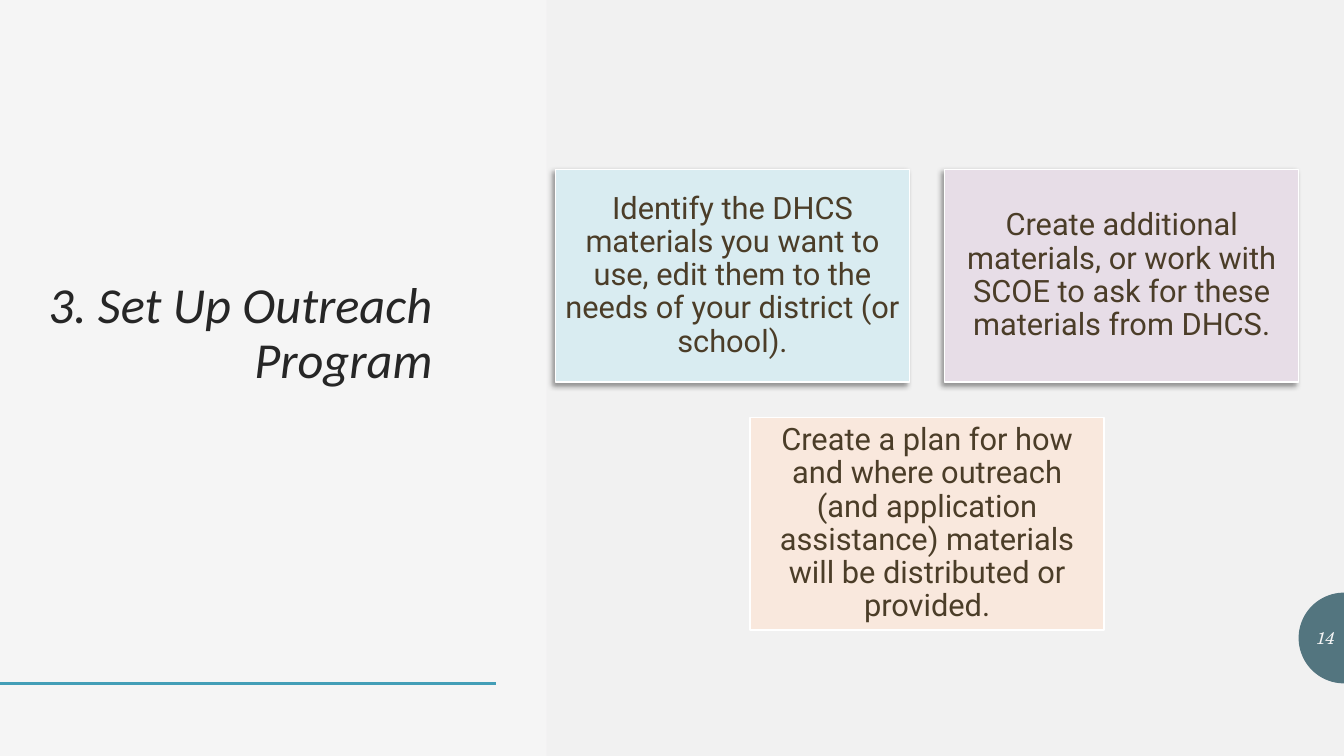
import math

import pptx
import pptx.dml.color
import pptx.enum.shapes
import pptx.enum.text
import pptx.oxml
import pptx.oxml.ns
import pptx.util
from lxml import etree

PX = 9144  # 100 px to the inch
NS = pptx.oxml.ns.nsdecls("a")
ALIGN = pptx.enum.text.PP_ALIGN


def color(value):
    return pptx.dml.color.RGBColor.from_string(value)


def write(shape, text, size, font, ink, align, italic=False, spacing=1.0, inset=10):
    frame = shape.text_frame
    frame.word_wrap = True
    frame.auto_size = pptx.enum.text.MSO_AUTO_SIZE.NONE
    frame.vertical_anchor = pptx.enum.text.MSO_ANCHOR.MIDDLE
    frame.margin_left = frame.margin_right = inset * PX
    frame.margin_top = frame.margin_bottom = min(inset, 9) * PX
    para = frame.paragraphs[0]
    para.alignment = align
    para.line_spacing = spacing
    span = para.add_run()
    span.text = text
    span.font.size = pptx.util.Pt(size)
    span.font.name = font
    span.font.italic = italic
    span.font.color.rgb = color(ink)


deck = pptx.Presentation()
deck.slide_width, deck.slide_height = 1333 * PX, 750 * PX
slide = deck.slides.add_slide(deck.slide_layouts[5])
slide.background.fill.solid()
slide.background.fill.fore_color.rgb = color("F5F5F5")
shapes = slide.shapes

# Half circle behind the page number, seen through the pale panel
center_x, center_y, radius = 1333, 633, 45
arc = []
for step in range(49):
    angle = math.pi * (0.5 + step / 48)
    arc.append((round((center_x + radius * math.cos(angle)) * PX),
                round((center_y + radius * math.sin(angle)) * PX)))
builder = shapes.build_freeform(*arc[0])
builder.add_line_segments(arc[1:], close=True)
badge = builder.convert_to_shape()
badge.shadow.inherit = False
badge.fill.solid()
badge.fill.fore_color.rgb = color("224F5C")
badge.line.fill.background()

rule = shapes.add_connector(pptx.enum.shapes.MSO_CONNECTOR.STRAIGHT,
                            0, 678 * PX, 492 * PX, 678 * PX)
rule.line.color.rgb = color("439EB7")
rule.line.width = pptx.util.Pt(2)
rule._element.spPr.append(pptx.oxml.parse_xml(f"<a:effectLst {NS}/>"))

RECTANGLE = pptx.enum.shapes.MSO_SHAPE.RECTANGLE
panel = shapes.add_shape(RECTANGLE, 542 * PX, 0, 791 * PX, 750 * PX)
panel.shadow.inherit = False
panel.fill.solid()
panel.fill.fore_color.rgb = color("E9E7E9")
panel.line.fill.background()
panel_color = panel._element.spPr.find(".//" + pptx.oxml.ns.qn("a:srgbClr"))
etree.SubElement(panel_color, pptx.oxml.ns.qn("a:alpha"), val="25000")

title = shapes.title
title.left, title.top, title.width, title.height = 0, 61 * PX, 439 * PX, 542 * PX
write(title, "3. Set Up Outreach Program", 36, "Calibri", "262626",
      ALIGN.RIGHT, italic=True, spacing=0.9)

cards = [
    (551, 168, "D9ECF1", True, "Identify the DHCS materials you want to use, "
     "edit them to the needs of your district (or school)."),
    (937, 168, "E7DDE7", True, "Create additional materials, or work with SCOE "
     "to ask for these materials from DHCS."),
    (744, 414, "F9E8DD", False, "Create a plan for how and where outreach (and "
     "application assistance) materials will be distributed or provided."),
]
for left, top, fill, shadowed, text in cards:
    card = shapes.add_shape(RECTANGLE, left * PX, top * PX, 351 * PX, 211 * PX)
    card.shadow.inherit = False
    card.fill.solid()
    card.fill.fore_color.rgb = color(fill)
    card.line.color.rgb = color("FFFFFF")
    card.line.width = pptx.util.Pt(1)
    if shadowed:
        effects = card._element.spPr.find(pptx.oxml.ns.qn("a:effectLst"))
        effects.append(pptx.oxml.parse_xml(
            f'<a:outerShdw {NS} blurRad="50800" dist="38100" dir="8100000" '
            'algn="tr" rotWithShape="0"><a:srgbClr val="000000">'
            '<a:alpha val="40000"/></a:srgbClr></a:outerShdw>'))
    write(card, text, 22, "Roboto", "4B3D28", ALIGN.CENTER, spacing=0.9, inset=9)

number = shapes.add_textbox(1289 * PX, 613 * PX, 45 * PX, 40 * PX)
write(number, "14", 12, "TeX Gyre Schola", "F5F5F5", ALIGN.RIGHT, italic=True)

deck.save("out.pptx")
